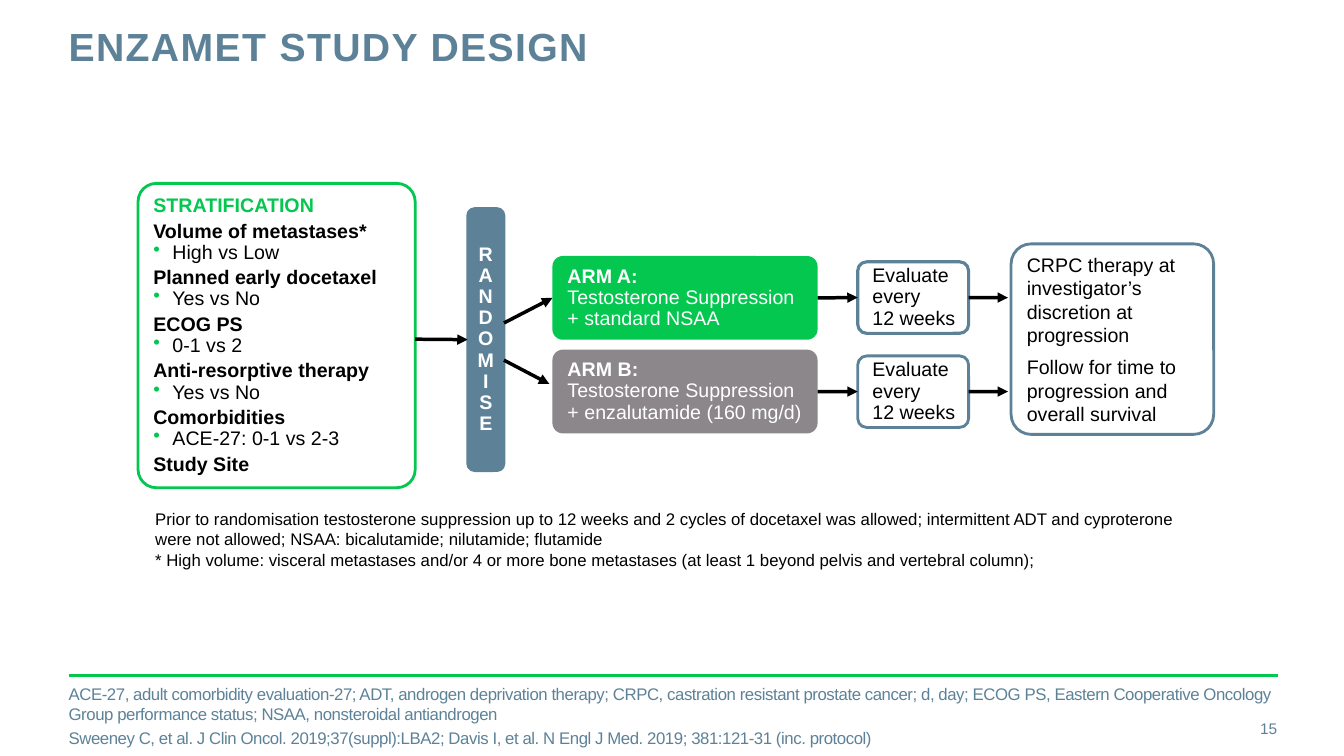
from lxml import etree
from pptx import Presentation
from pptx import util as u
from pptx.dml import color as c
from pptx.enum import shapes, text
from pptx.oxml import ns

GREEN, BLUE, GREY, BLACK, WHITE = "03C74F", "5D8298", "8B878B", "000000", "FFFFFF"


def rgb(hex_code):
    return c.RGBColor.from_string(hex_code)


def write(shape, lines, size, hex_code, insets=(0, 0, 0, 0), anchor="MIDDLE",
          spacing=None, before=0, bold=False, align="LEFT"):
    frame = shape.text_frame
    frame.text = "\n".join(lines)
    frame.word_wrap = True
    frame.auto_size = text.MSO_AUTO_SIZE.NONE
    frame.vertical_anchor = text.MSO_ANCHOR[anchor]
    (frame.margin_left, frame.margin_top,
     frame.margin_right, frame.margin_bottom) = [u.Pt(inset) for inset in insets]
    for number, para in enumerate(frame.paragraphs):
        para.text = lines[number]
        para.alignment = text.PP_ALIGN[align]
        para.line_spacing = spacing
        para.space_before = u.Pt(before if number else 0)
        for span in para.runs:
            span.font.name, span.font.size, span.font.bold = "Arial", u.Pt(size), bold
            span.font.color.rgb = rgb(hex_code)
    return frame.paragraphs


deck = Presentation()
deck.slide_width, deck.slide_height = u.Pt(960), u.Pt(540)
page = deck.slides.add_slide(deck.slide_layouts[5])

# Title
title = page.shapes.title
title.left, title.top, title.width, title.height = map(u.Pt, (49, 19.4, 688, 63))
heading = write(title, ["ENZAMET STUDY DESIGN"], 28, BLUE, anchor="TOP",
                spacing=u.Pt(30), bold=True)
heading[0].runs[0].font._element.set("spc", "100")

# Rounded boxes: left, top, width, height, corner, fill, line, line width
box_styles = {
    "strata": (98.6, 131, 198, 217.4, 0.066, WHITE, GREEN, 2),
    "randomise": (334.1, 149, 25.9, 187.2, 0.196, BLUE, BLUE, 2),
    "arm A": (394.6, 182.9, 189.4, 59.8, 0.125, GREEN, None, 0),
    "arm B": (394.6, 249.8, 189.4, 59.8, 0.125, GREY, None, 0),
    "evaluate A": (612.7, 187, 79.2, 51.1, 0.125, WHITE, BLUE, 2.25),
    "evaluate B": (612.7, 254.2, 79.2, 51.1, 0.125, WHITE, BLUE, 2),
    "outcome": (722.2, 174.2, 144.7, 136.1, 0.105, WHITE, BLUE, 2),
}
boxes = {}
for name, (left, top, width, height, corner, fill, line, weight) in box_styles.items():
    box = page.shapes.add_shape(shapes.MSO_SHAPE.ROUNDED_RECTANGLE,
                                u.Pt(left), u.Pt(top), u.Pt(width), u.Pt(height))
    box.shadow.inherit = False
    box.adjustments[0] = corner
    box.fill.solid()
    box.fill.fore_color.rgb = rgb(fill)
    if line:
        box.line.color.rgb = rgb(line)
        box.line.width = u.Pt(weight)
    else:
        box.line.fill.background()
    boxes[name] = box

# Stratification factors
wide, tight = (7.2, 3.6, 7.2, 3.6), (8.6, 3.6, 0, 3.6)
factors = [("Volume of metastases*", "High vs Low"), ("Planned early docetaxel", "Yes vs No"),
           ("ECOG PS", "0-1 vs 2"), ("Anti-resorptive therapy", "Yes vs No"),
           ("Comorbidities", "ACE-27: 0-1 vs 2-3")]
levels = [level for _, level in factors]
lines = ["STRATIFICATION", *[entry for pair in factors for entry in pair], "Study Site"]
paras = write(boxes["strata"], lines, 14, BLACK, wide, spacing=0.9, before=3, bold=True)
paras[0].runs[0].font.color.rgb = rgb(GREEN)
for para in paras:
    if para.text in levels:
        para.space_before = u.Pt(0)
        para.runs[0].font.bold = False
        properties = para._p.get_or_add_pPr()
        properties.set("marL", str(u.Pt(13.7)))
        properties.set("indent", str(u.Pt(-13.7)))
        tint = etree.SubElement(properties, ns.qn("a:buClr"))
        etree.SubElement(tint, ns.qn("a:srgbClr")).set("val", GREEN)
        etree.SubElement(properties, ns.qn("a:buChar")).set("char", "•")

# Randomisation, arms, evaluation and outcome
write(boxes["randomise"], list("RANDOMISE"), 14, WHITE, (0, 3.6, 0, 3.6),
      spacing=0.9, bold=True, align="CENTER")
for arm, drug in (("A", "standard NSAA"), ("B", "enzalutamide (160 mg/d)")):
    paras = write(boxes[f"arm {arm}"], [f"ARM {arm}:\vTestosterone Suppression\v+ {drug}"],
                  14, WHITE, tight, spacing=0.9)
    paras[0].runs[0].font.bold = True
    write(boxes[f"evaluate {arm}"], ["Evaluate\vevery\v12 weeks"], 14, BLACK, tight, spacing=0.9)
write(boxes["outcome"], ["CRPC therapy at investigator’s discretion at progression",
                         "Follow for time to progression and overall survival"],
      14, BLACK, wide, before=6)

# Arrows and footer rule: start, end, joined start box, joined end box
links = [
    ((296.6, 242.3), (334.1, 242.6), None, "randomise"),
    ((360, 230.7), (394.6, 212.8), None, "arm A"),
    ((360, 257.3), (392.4, 274.3), None, None),
    ((584, 212.8), (612.7, 212.6), "arm A", "evaluate A"),
    ((584, 279.7), (612.7, 279.7), "arm B", "evaluate B"),
    ((691.9, 212.6), (720, 212.6), "evaluate A", None),
    ((691.9, 279.7), (720, 279.7), "evaluate B", None),
    ((49, 482.4), (913, 482.4), None, None),
]
for number, (start, end, source, target) in enumerate(links):
    is_rule = number == len(links) - 1
    link = page.shapes.add_connector(shapes.MSO_CONNECTOR.STRAIGHT,
                                     *map(u.Pt, start), *map(u.Pt, end))
    if source:
        link.begin_connect(boxes[source], 3)
    if target:
        link.end_connect(boxes[target], 1)
    link.line.color.rgb = rgb(GREEN if is_rule else BLACK)
    link.line.width = u.Pt(2 if is_rule else 2.5)
    if not is_rule:
        etree.SubElement(link.line._get_or_add_ln(), ns.qn("a:tailEnd")).set("type", "triangle")
    etree.SubElement(link._element.spPr, ns.qn("a:effectLst"))

# Study notes, footnotes and page number
notes = page.shapes.add_textbox(u.Pt(110.9), u.Pt(363.6), u.Pt(801.4), u.Pt(105.8))
write(notes, [
    "Prior to randomisation testosterone suppression up to 12 weeks and 2 cycles of docetaxel "
    "was allowed; intermittent ADT and cyproterone\v"
    "were not allowed; NSAA: bicalutamide; nilutamide; flutamide",
    "* High volume: visceral metastases and/or 4 or more bone metastases "
    "(at least 1 beyond pelvis and vertebral column);"], 12, BLACK, anchor="TOP")

footnotes = page.shapes.add_textbox(u.Pt(49), u.Pt(496.8), u.Pt(879), u.Pt(28.8))
paras = write(footnotes, [
    "ACE-27, adult comorbidity evaluation-27; ADT, androgen deprivation therapy; CRPC, castration "
    "resistant prostate cancer; d, day; ECOG PS, Eastern Cooperative Oncology Group performance "
    "status; NSAA, nonsteroidal antiandrogen",
    "Sweeney C, et al. J Clin Oncol. 2019;37(suppl):LBA2; Davis I, et al. N Engl J Med. 2019; "
    "381:121-31 (inc. protocol)"], 12, BLUE, before=3)
for para in paras:
    para.runs[0].font._element.set("spc", "-30")

page_number = page.shapes.add_textbox(u.Pt(850.3), u.Pt(506.2), u.Pt(62), u.Pt(28.8))
write(page_number, ["15"], 11, BLUE, align="RIGHT")

deck.save("out.pptx")
